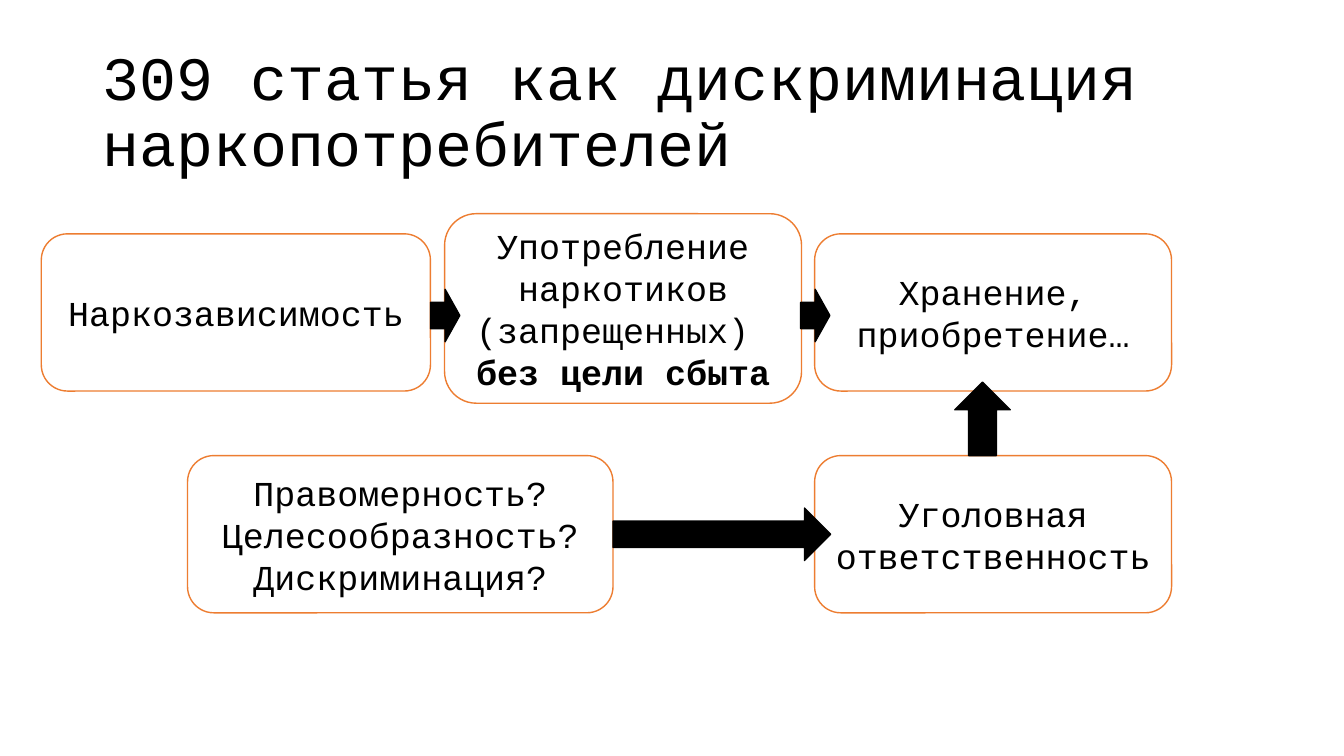
from dataclasses import dataclass

from pptx import Presentation
from pptx.dml.color import RGBColor
from pptx.enum.shapes import MSO_SHAPE
from pptx.enum.text import MSO_ANCHOR, MSO_AUTO_SIZE, PP_ALIGN
from pptx.util import Inches, Pt

ROUND = MSO_SHAPE.ROUNDED_RECTANGLE
ARROW = MSO_SHAPE.RIGHT_ARROW
MIDDLE = MSO_ANCHOR.MIDDLE
FIXED = MSO_AUTO_SIZE.NONE
LEFT = PP_ALIGN.LEFT
CENTER = PP_ALIGN.CENTER

BLACK = RGBColor(0x00, 0x00, 0x00)
WHITE = RGBColor(0xFF, 0xFF, 0xFF)
ORANGE = RGBColor(0xED, 0x7D, 0x31)
FONT = "Courier New"

HIGH = 1.56
WIDE = 3.54
TOP = 2.32
LOW = 4.52
RIGHT = 8.08


@dataclass
class Box:
    left: float
    top: float
    width: float
    height: float
    lines: tuple[str, ...]
    strong: str = ""


@dataclass
class Arrow:
    left: float
    top: float
    width: float
    height: float = 0.52
    turn: int = 0


BOXES = [
    Box(0.41, TOP, 3.86, HIGH, ("Наркозависимость",)),
    Box(4.41, 2.12, WIDE, 1.88, ("Употребление наркотиков (запрещенных) ",),
        "без цели сбыта"),
    Box(RIGHT, TOP, WIDE, HIGH, ("Хранение, приобретение…",)),
    Box(RIGHT, LOW, WIDE, HIGH, ("Уголовная ответственность",)),
    Box(1.86, LOW, 4.22, HIGH,
        ("Правомерность?", "Целесообразность?", "Дискриминация?")),
]
ARROWS = [
    Arrow(4.27, 2.87, 0.29),
    Arrow(7.94, 2.87, 0.29),
    Arrow(9.38, 3.88, 0.73, 0.55, 270),
    Arrow(6.08, 5.04, 2.16),
]


def add_run(para, text: str, size: int, bold: bool = False) -> None:
    run = para.add_run()
    run.text = text
    run.font.name = FONT
    run.font.size = Pt(size)
    run.font.bold = bold
    run.font.color.rgb = BLACK


def add_form(slide, kind, item: Box | Arrow, fill: RGBColor, line: RGBColor):
    shape = slide.shapes.add_shape(
        kind, Inches(item.left), Inches(item.top),
        Inches(item.width), Inches(item.height))
    shape.shadow.inherit = False
    shape.fill.solid()
    shape.fill.fore_color.rgb = fill
    shape.line.color.rgb = line
    shape.line.width = Pt(1)
    return shape


def add_box(slide, box: Box) -> None:
    frame = add_form(slide, ROUND, box, WHITE, ORANGE).text_frame
    frame.word_wrap = True
    frame.vertical_anchor = MIDDLE
    para = frame.paragraphs[0]
    para.alignment = CENTER
    for index, text in enumerate(box.lines):
        if index:
            para.add_line_break()
        add_run(para, text, 25)
    if box.strong:
        para.add_line_break()
        add_run(para, box.strong, 25, True)


def add_arrow(slide, arrow: Arrow) -> None:
    add_form(slide, ARROW, arrow, BLACK, BLACK).rotation = arrow.turn


def add_title(slide, text: str) -> None:
    title = slide.shapes.title
    title.left, title.top = Inches(0.92), Inches(0.4)
    title.width, title.height = Inches(12.31), Inches(1.45)
    frame = title.text_frame
    frame.word_wrap = True
    frame.auto_size = FIXED
    frame.vertical_anchor = MIDDLE
    para = frame.paragraphs[0]
    para.alignment = LEFT
    para.line_spacing = 0.9
    add_run(para, text, 44)


def main() -> None:
    deck = Presentation()
    deck.slide_width, deck.slide_height = Inches(13.33), Inches(7.5)
    slide = deck.slides.add_slide(deck.slide_layouts[5])
    add_title(slide, "309 статья как дискриминация наркопотребителей")
    for box in BOXES:
        add_box(slide, box)
    for arrow in ARROWS:
        add_arrow(slide, arrow)
    deck.save("out.pptx")


if __name__ == "__main__":
    main()
